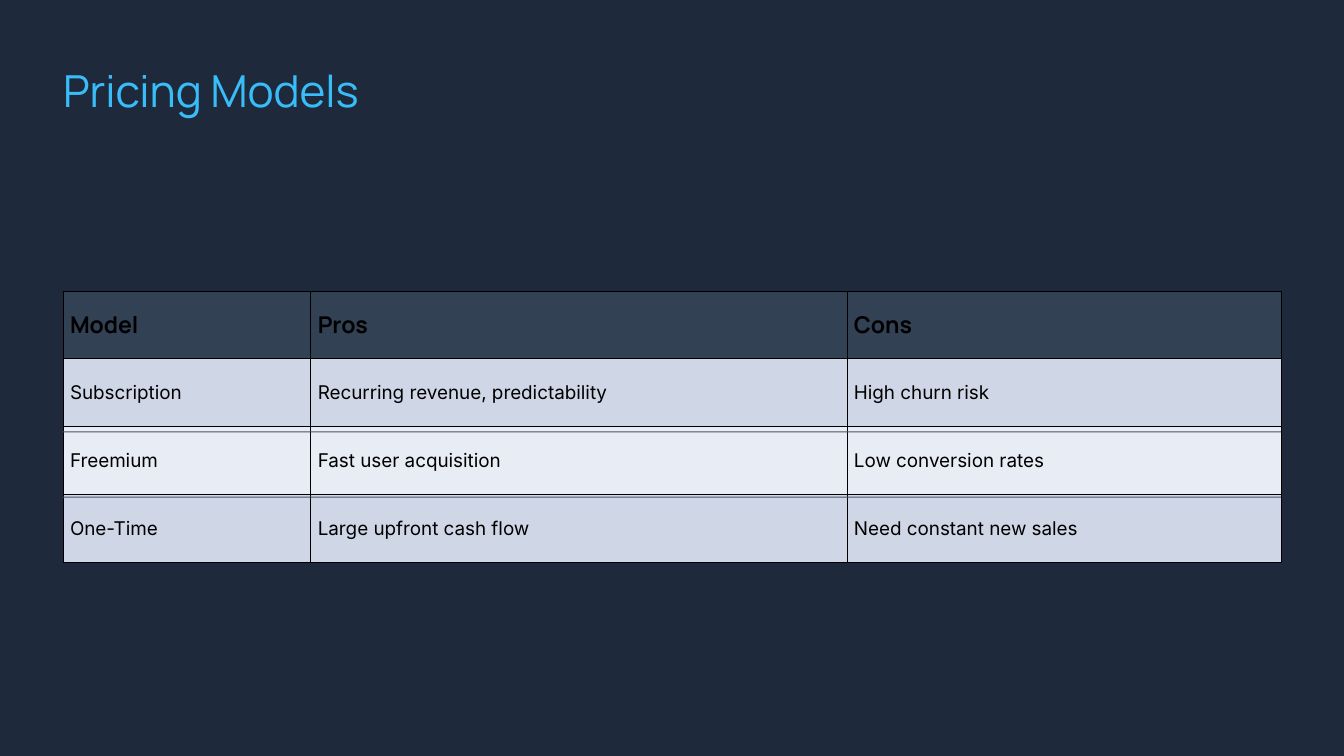
from itertools import accumulate

from lxml import etree
from pptx import Presentation
from pptx import util as u
from pptx.dml import color
from pptx.enum import shapes, text
from pptx.oxml import ns


def paint(target, hex_code):
    target.solid()
    target.fore_color.rgb = color.RGBColor.from_string(hex_code)


def write(frame, content, size=13.5, font="Inter", ink="000000", bold=False,
          anchor=text.MSO_ANCHOR.MIDDLE, insets=(5, 3.75)):
    frame.word_wrap = True
    frame.vertical_anchor = anchor
    frame.margin_left = frame.margin_right = u.Pt(insets[0])
    frame.margin_top = frame.margin_bottom = u.Pt(insets[1])
    frame.text = content
    line = frame.paragraphs[0]
    line.alignment = text.PP_ALIGN.LEFT
    run_font = line.runs[0].font
    run_font.size = u.Pt(size)
    run_font.name = font
    run_font.bold = bold
    paint(run_font.fill, ink)


deck = Presentation()
deck.slide_width, deck.slide_height = u.Pt(960), u.Pt(540)
slide = deck.slides.add_slide(deck.slide_layouts[5])
paint(slide.background.fill, "1E293B")

heading = slide.shapes.title
heading.left, heading.top = u.Pt(45), u.Pt(45)
heading.width, heading.height = u.Pt(914), u.Pt(37.5)
write(heading.text_frame, "Pricing Models", size=31.5, font="Manrope",
      ink="38BDF8", anchor=text.MSO_ANCHOR.TOP, insets=(0, 0))
heading.text_frame.auto_size = text.MSO_AUTO_SIZE.SHAPE_TO_FIT_TEXT

models = [
    ("Model", "Pros", "Cons"),
    ("Subscription", "Recurring revenue, predictability", "High churn risk"),
    ("Freemium", "Fast user acquisition", "Low conversion rates"),
    ("One-Time", "Large upfront cash flow", "Need constant new sales"),
]
column_widths = [177, 383, 310]
row_height = 48.4
row_fills = ["334155", "CFD7E7", "E8ECF4", "CFD7E7"]

pricing = slide.shapes.add_table(
    len(models), len(column_widths), u.Pt(45), u.Pt(208),
    u.Pt(sum(column_widths)), u.Pt(row_height * len(models))).table
for column, width in zip(pricing.columns, column_widths):
    column.width = u.Pt(width)

for row, (model, row_fill) in enumerate(zip(models, row_fills)):
    pricing.rows[row].height = u.Pt(row_height)
    label_format = {"size": 16.5, "font": "Manrope", "bold": True} if row == 0 else {}
    for col, label in enumerate(model):
        cell = pricing.cell(row, col)
        write(cell.text_frame, label, **label_format)
        cell.vertical_anchor = text.MSO_ANCHOR.MIDDLE
        cell.margin_left = cell.margin_right = u.Pt(5)
        cell.margin_top = cell.margin_bottom = u.Pt(3.75)
        properties = cell._tc.get_or_add_tcPr()
        for side in ("a:lnL", "a:lnR", "a:lnT", "a:lnB"):
            border = etree.SubElement(properties, ns.qn(side), w=str(u.Pt(0.75)))
            border_fill = etree.SubElement(border, ns.qn("a:solidFill"))
            etree.SubElement(border_fill, ns.qn("a:srgbClr"), val="000000")
        paint(cell.fill, row_fill)

column_lefts = accumulate(column_widths[:-1], initial=45)
for left, width in zip(column_lefts, column_widths):
    for top in (308.2, 354.7):
        divider = slide.shapes.add_shape(
            shapes.MSO_SHAPE.RECTANGLE, u.Pt(left), u.Pt(top), u.Pt(width), u.Pt(0.75))
        divider.shadow.inherit = False
        divider.line.fill.background()
        paint(divider.fill, "475569")

deck.save("out.pptx")
